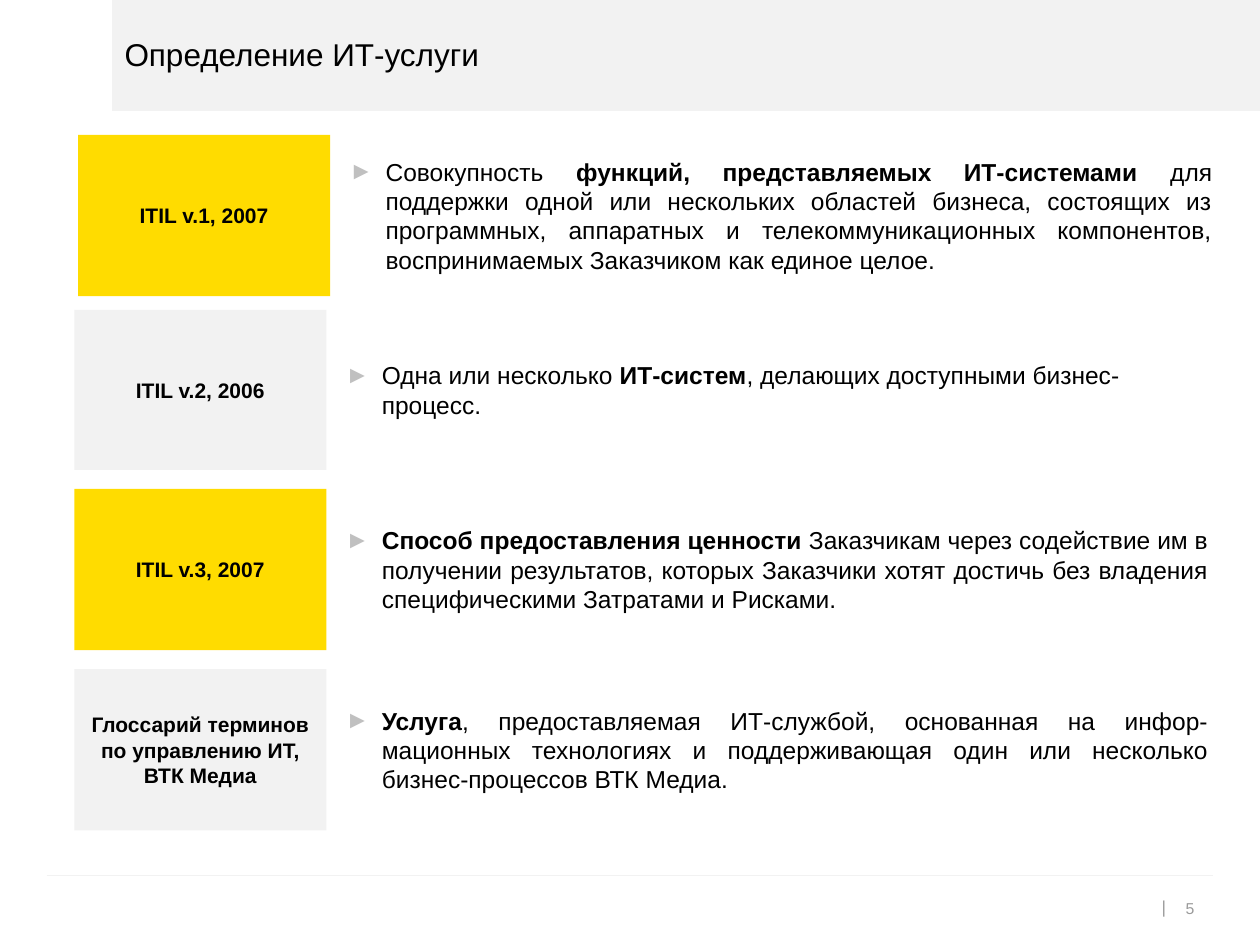
from dataclasses import dataclass

from lxml import etree
from pptx import Presentation
from pptx.dml.color import RGBColor
from pptx.enum.shapes import MSO_CONNECTOR, MSO_SHAPE
from pptx.enum.text import MSO_ANCHOR, PP_ALIGN
from pptx.oxml.ns import qn
from pptx.util import Inches, Pt

RECT = MSO_SHAPE.RECTANGLE
STRAIGHT = MSO_CONNECTOR.STRAIGHT
MIDDLE = MSO_ANCHOR.MIDDLE
LEFT, CENTER, JUSTIFY = PP_ALIGN.LEFT, PP_ALIGN.CENTER, PP_ALIGN.JUSTIFY


@dataclass(frozen=True)
class Theme:
    font: str = "Arial"
    text: str = "000000"
    yellow: str = "FFDC00"
    light: str = "F2F2F2"
    bullet: str = "C0C0C0"
    muted: str = "9B9B9B"
    title_size: int = 18
    body_size: int = 14
    label_size: int = 12
    number_size: int = 9


THEME = Theme()

# left, top, height, fill, label, alignment, definition as (text, bold) runs
DEFINITIONS = [
    (0.62, 1.07, 1.28, THEME.yellow, "ITIL v.1, 2007", JUSTIFY, [
        ("Совокупность ", False),
        ("функций, представляемых ИТ-системами ", True),
        ("для поддержки одной или нескольких областей бизнеса, состоящих из "
         "программных, аппаратных и телекоммуникационных компонентов, "
         "воспринимаемых Заказчиком как единое целое.", False)]),
    (0.59, 2.46, 1.27, THEME.light, "ITIL v.2, 2006", LEFT, [
        ("Одна или несколько ", False),
        ("ИТ-систем", True),
        (", делающих доступными бизнес-процесс.", False)]),
    (0.59, 3.88, 1.28, THEME.yellow, "ITIL v.3, 2007", JUSTIFY, [
        ("Способ предоставления ценности ", True),
        ("Заказчикам через содействие им в получении результатов, которых "
         "Заказчики хотят достичь без владения специфическими Затратами и "
         "Рисками.", False)]),
    (0.59, 5.31, 1.28, THEME.light,
     "Глоссарий терминов по управлению ИТ, ВТК Медиа", JUSTIFY, [
         ("Услуга", True),
         (", предоставляемая ИТ-службой, основанная на инфор-мационных "
          "технологиях и поддерживающая один или несколько "
          "бизнес-процессов ВТК Медиа.", False)]),
]


def rgb(color):
    return RGBColor.from_string(color)


def add_block(s, left, top, width, height, fill):
    sp = s.shapes.add_shape(RECT, Inches(left), Inches(top),
                            Inches(width), Inches(height))
    sp.shadow.inherit = False
    sp.fill.solid()
    sp.fill.fore_color.rgb = rgb(fill)
    sp.line.fill.background()
    return sp


def add_box(s, left, top, width, height):
    return s.shapes.add_textbox(Inches(left), Inches(top),
                                Inches(width), Inches(height))


def set_text(sp, runs, size, color=THEME.text, align=LEFT, inset=(0.1, 0.05)):
    """Fill a shape with one paragraph of (text, bold) runs and return it."""
    tf = sp.text_frame
    tf.word_wrap = True
    tf.vertical_anchor = MIDDLE
    tf.margin_left = tf.margin_right = Inches(inset[0])
    tf.margin_top = tf.margin_bottom = Inches(inset[1])
    p = tf.paragraphs[0]
    p.alignment = align
    for text, bold in runs:
        r = p.add_run()
        r.text = text
        r.font.name = THEME.font
        r.font.size = Pt(size)
        r.font.bold = bold
        r.font.color.rgb = rgb(color)
    return p


def set_bullet(p, char, color, indent, percent=100):
    pPr = p._p.get_or_add_pPr()
    pPr.set("marL", str(Inches(indent)))
    pPr.set("indent", str(-Inches(indent)))
    clr = etree.SubElement(pPr, qn("a:buClr"))
    etree.SubElement(clr, qn("a:srgbClr"), val=color)
    etree.SubElement(pPr, qn("a:buSzPct"), val=str(percent * 1000))
    etree.SubElement(pPr, qn("a:buFont"), typeface=THEME.font)
    etree.SubElement(pPr, qn("a:buChar"), char=char)


def add_rule(s, left, right, y):
    line = s.shapes.add_connector(STRAIGHT, Inches(left), Inches(y),
                                  Inches(right), Inches(y))
    line.line.color.rgb = rgb(THEME.light)
    line.line.width = Pt(0.75)
    etree.SubElement(line._element.spPr, qn("a:effectLst"))


def add_header(s, title):
    add_block(s, 0.89, 0, 9.11, 0.88, THEME.light)
    set_text(add_box(s, 0.89, 0, 8.7, 0.86), [(title, False)],
             THEME.title_size)


def add_footer(s, number):
    add_rule(s, 0.37, 9.63, 6.95)
    p = set_text(add_box(s, 9.22, 7.08, 0.4, 0.25), [(number, False)],
                 THEME.number_size, THEME.muted, inset=(0, 0.05))
    set_bullet(p, "|", THEME.muted, 0.19, 110)


def add_definition(s, left, top, height, fill, label, align, runs):
    """Add a coloured source label with its definition to the right."""
    set_text(add_block(s, left, top, 2, height, fill), [(label, True)],
             THEME.label_size, align=CENTER)
    p = set_text(add_box(s, left + 2.15, top, 6.85, height), runs,
                 THEME.body_size, align=align, inset=(0, 0))
    set_bullet(p, "►", THEME.bullet, 0.29)


def main():
    prs = Presentation()
    prs.slide_width, prs.slide_height = Inches(10), Inches(7.5)
    s = prs.slides.add_slide(prs.slide_layouts[6])
    add_header(s, "Определение ИТ-услуги")
    for definition in DEFINITIONS:
        add_definition(s, *definition)
    add_footer(s, "5")
    prs.save("out.pptx")


if __name__ == "__main__":
    main()
